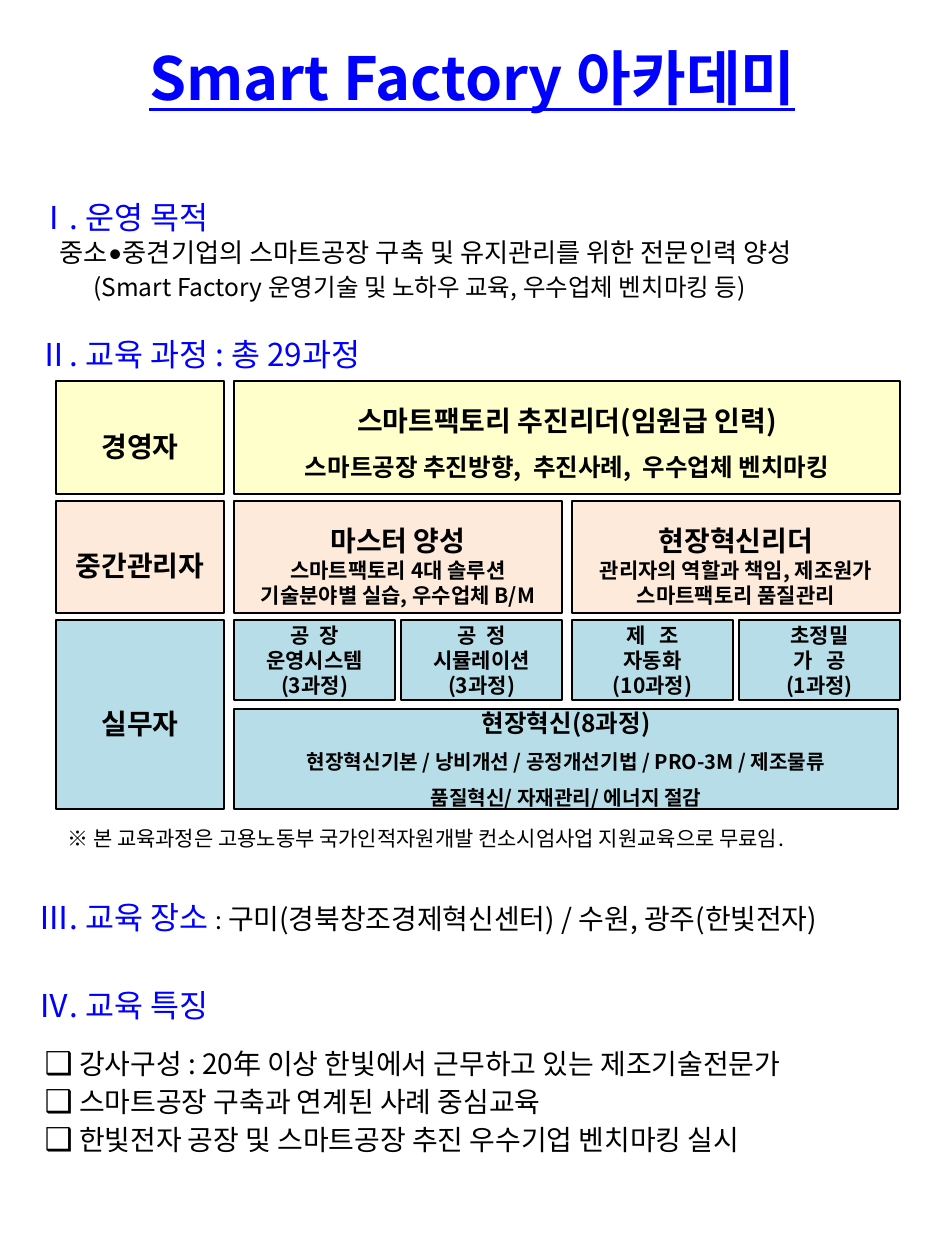
import dataclasses
import lxml.etree
import pptx
import pptx.dml.color
import pptx.enum.shapes
import pptx.enum.text
import pptx.oxml.ns
import pptx.util

SCALE = 914400 / 126
FONT = "Noto Sans CJK KR"
HUES = {
    "blue": "0000FF",
    "black": "000000",
    "cream": "FFFFCC",
    "peach": "FDEADA",
    "aqua": "B7DEE8",
}
ALIGN = pptx.enum.text.PP_ALIGN
ANCHOR = pptx.enum.text.MSO_ANCHOR
FIT = pptx.enum.text.MSO_AUTO_SIZE


@dataclasses.dataclass
class Run:
    text: str
    size: float
    hue: str = "black"
    bold: bool = False
    line: bool = False
    font: str = FONT


@dataclasses.dataclass
class Para:
    runs: list[Run]
    space: float = 1.0
    before: float = 0
    indent: int = 0


@dataclasses.dataclass
class Box:
    left: int
    top: int
    width: int
    height: int
    paras: list[Para]
    fill: str = ""
    middle: bool = True


def px(count: int) -> int:
    return round(count * SCALE)


def rgb(hue: str) -> pptx.dml.color.RGBColor:
    return pptx.dml.color.RGBColor.from_string(HUES[hue])


def bold(text: str, size: float, space: float = 1.0) -> Para:
    return Para([Run(text, size, bold=True)], space)


def add_run(para, spec_run: Run) -> None:
    run = para.add_run()
    run.text = spec_run.text
    font = run.font
    font.size = pptx.util.Pt(spec_run.size)
    font.bold = spec_run.bold
    font.underline = spec_run.line
    font.color.rgb = rgb(spec_run.hue)
    font.name = spec_run.font
    east = lxml.etree.SubElement(font._element, pptx.oxml.ns.qn("a:ea"))
    east.set("typeface", spec_run.font)


def write(frame, paras: list[Para], align) -> None:
    frame.word_wrap = True
    for place, item in enumerate(paras):
        para = frame.add_paragraph() if place else frame.paragraphs[0]
        para.alignment = align
        para.line_spacing = item.space
        para.space_before = pptx.util.Pt(item.before)
        if item.indent:
            para._p.get_or_add_pPr().set("marL", str(px(item.indent)))
        for run in item.runs:
            add_run(para, run)


def draw_box(slide, box: Box) -> None:
    shape = slide.shapes.add_shape(
        pptx.enum.shapes.MSO_SHAPE.RECTANGLE,
        px(box.left), px(box.top), px(box.width), px(box.height),
    )
    shape.shadow.inherit = False
    shape.fill.solid()
    shape.fill.fore_color.rgb = rgb(box.fill)
    shape.line.color.rgb = rgb("black")
    shape.line.width = pptx.util.Pt(0.75)
    frame = shape.text_frame
    frame.vertical_anchor = ANCHOR.MIDDLE if box.middle else ANCHOR.TOP
    write(frame, box.paras, ALIGN.CENTER)


def draw_text(slide, box: Box) -> None:
    shape = slide.shapes.add_textbox(
        px(box.left), px(box.top), px(box.width), px(box.height)
    )
    write(shape.text_frame, box.paras, ALIGN.LEFT)
    shape.text_frame.auto_size = FIT.SHAPE_TO_FIT_TEXT


def draw_title(slide) -> None:
    title = slide.shapes.title
    title.left, title.top = 0, px(35)
    title.width, title.height = px(945), px(84)
    frame = title.text_frame
    frame.vertical_anchor = ANCHOR.TOP
    write(frame, [Para([Run("Smart Factory 아카데미", 34, "blue", True, True)])], ALIGN.CENTER)
    frame.auto_size = FIT.SHAPE_TO_FIT_TEXT


def head(text: str, space: float = 1.0, before: float = 0) -> Para:
    return Para([Run(text, 18, "blue")], space, before)


def point(text: str, space: float = 1.0) -> Para:
    return Para([Run(" ", 16), Run("❑", 18), Run(" " + text, 16)], space)


TEXTS = [
    Box(26, 173, 883, 208, [
        head("Ⅰ. 운영 목적", 1.5),
        Para([
            Run("중소", 15),
            Run("•", 15, font="Lato"),
            Run("중견기업의 스마트공장 구축 및 유지관리를 위한 전문인력 양성", 15),
        ], indent=21),
        Para([Run("(Smart Factory 운영기술 및 노하우 교육, 우수업체 벤치마킹 등)", 14)],
             before=2.4, indent=55),
        head("Ⅱ. 교육 과정 : 총 29과정", 1.5, 8.4),
    ]),
    Box(26, 892, 903, 273, [
        Para([
            Run("Ⅲ. 교육 장소 ", 18, "blue"),
            Run(": ", 14),
            Run("구미(경북창조경제혁신센터) / 수원, 광주(한빛전자)", 16),
        ]),
        head("Ⅳ. 교육 특징", before=28.8),
        point("강사구성 : 20年 이상 한빛에서 근무하고 있는 제조기술전문가", 1.5),
        point("스마트공장 구축과 연계된 사례 중심교육"),
        point("한빛전자 공장 및 스마트공장 추진 우수기업 벤치마킹 실시"),
    ]),
    Box(55, 819, 843, 38, [
        Para([Run("※ 본 교육과정은 고용노동부 국가인적자원개발 컨소시엄사업 지원교육으로 무료임.", 12)]),
    ]),
]

LEVELS = [
    ("경영자", 381, 113, "cream"),
    ("중간관리자", 501, 112, "peach"),
    ("실무자", 620, 189, "aqua"),
]
LEADERS = [
    ("마스터 양성", "스마트팩토리 4대 솔루션", "기술분야별 실습, 우수업체 B/M"),
    ("현장혁신리더", "관리자의 역할과 책임, 제조원가", "스마트팩토리 품질관리"),
]
SKILLS = [
    ("공  장", "운영시스템", "(3과정)"),
    ("공  정", "시뮬레이션", "(3과정)"),
    ("제   조", "자동화", "(10과정)"),
    ("초정밀", "가   공", "(1과정)"),
]
START, HALF, STEP = 234, 338, 167


def boxes() -> list[Box]:
    found = [Box(56, top, 168, high, [bold(name, 16, 1.5)], hue)
             for name, top, high, hue in LEVELS]
    found.append(Box(START, 381, 666, 113, [
        bold("스마트팩토리 추진리더(임원급 인력)", 16, 1.5),
        bold("스마트공장 추진방향,  추진사례,  우수업체 벤치마킹", 14, 1.5),
    ], "cream", False))
    for place, (name, *lines) in enumerate(LEADERS):
        paras = [bold(name, 16, 1.5)] + [bold(line, 12) for line in lines]
        found.append(Box(START + place * HALF, 501, 328, 112, paras, "peach", False))
    for place, lines in enumerate(SKILLS):
        left = START + place // 2 * HALF + place % 2 * STEP
        found.append(Box(left, 620, 161, 80, [bold(line, 12) for line in lines], "aqua"))
    found.append(Box(START, 709, 664, 100, [
        bold("현장혁신(8과정)", 14),
        bold("현장혁신기본 / 낭비개선 / 공정개선기법 / PRO-3M / 제조물류", 11.5, 1.5),
        bold("품질혁신/ 자재관리/ 에너지 절감", 11.5, 1.5),
    ], "aqua"))
    return found


def main() -> None:
    deck = pptx.Presentation()
    deck.slide_width, deck.slide_height = px(945), px(1260)
    slide = deck.slides.add_slide(deck.slide_layouts[5])
    draw_title(slide)
    for box in TEXTS:
        draw_text(slide, box)
    for box in boxes():
        draw_box(slide, box)
    deck.save("out.pptx")


if __name__ == "__main__":
    main()
